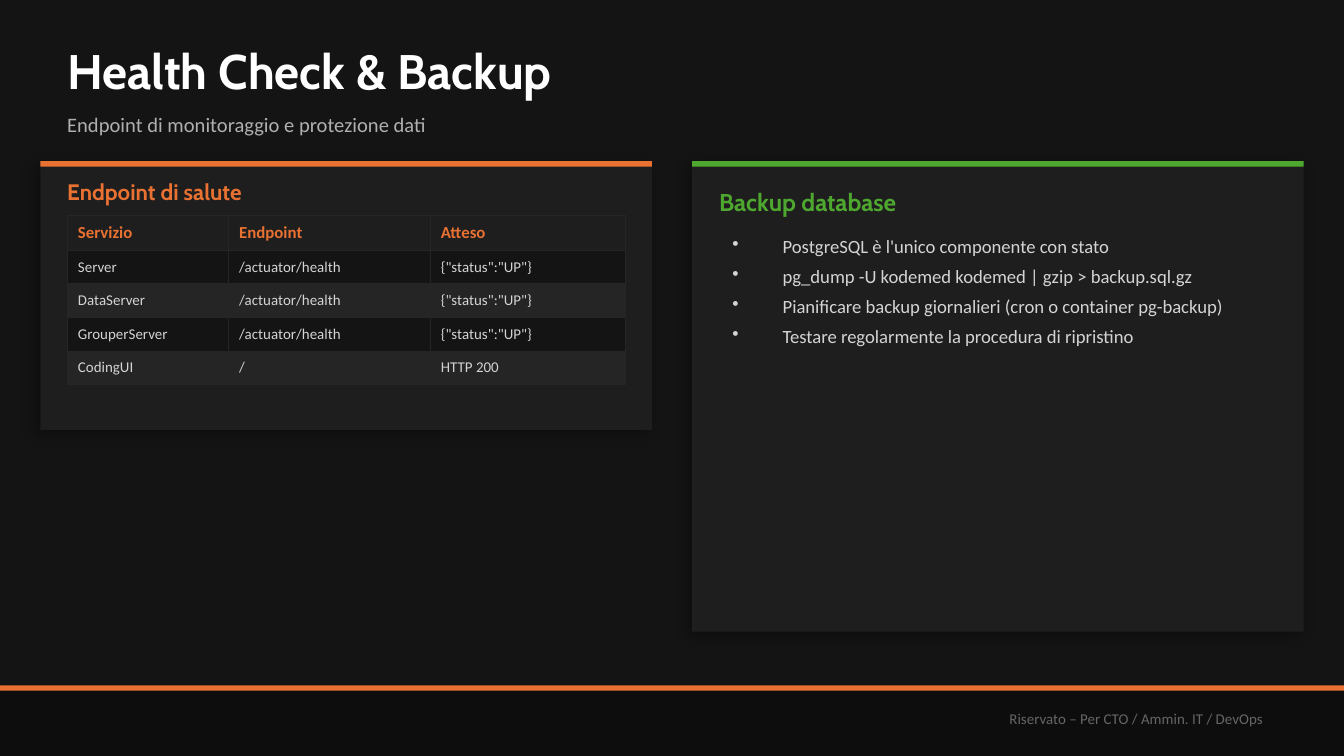
"""Build the health check and backup slide."""
from lxml.etree import SubElement
from pptx import Presentation
from pptx.dml.color import RGBColor
from pptx.enum.shapes import MSO_SHAPE as Shape
from pptx.enum.text import MSO_ANCHOR as Anchor, MSO_AUTO_SIZE as AutoSize, PP_ALIGN as Align
from pptx.oxml import parse_xml
from pptx.oxml.ns import nsdecls, qn
from pptx.util import Pt

PX = 4572
HEADING, BODY = "Cabin", "Calibri"
ORANGE, GREEN, WHITE = "E97132", "4EA72E", "FFFFFF"
DARK, PANEL, STRIPE, FOOTER = "141414", "1E1E1E", "252525", "0D0D0D"
LIGHT, MUTED, FAINT = "D4D4D4", "B0B0B0", "666666"
color = RGBColor.from_string


def set_font(font, size, name, hex_color, bold=False):
    font.size, font.name, font.bold = Pt(size), name, bold
    font.color.rgb = color(hex_color)


def add_bar(place, hex_color):
    bar = page.shapes.add_shape(Shape.RECTANGLE, *[n * PX for n in place])
    bar.shadow.inherit = False
    bar.fill.solid()
    bar.fill.fore_color.rgb = color(hex_color)
    bar.line.fill.background()
    return bar


deck = Presentation()
deck.slide_width, deck.slide_height = 2000 * PX, 1125 * PX
page = deck.slides.add_slide(deck.slide_layouts[5])
page.background.fill.solid()
page.background.fill.fore_color.rgb = color(DARK)

add_bar((0, 1020, 2000, 105), FOOTER)
add_bar((0, 1020, 2000, 8), ORANGE)

for left, height, accent in [(60, 400, ORANGE), (1030, 700, GREEN)]:
    panel = add_bar((left, 240, 910, height), PANEL)
    effects = panel._element.spPr.find(qn("a:effectLst"))
    effects.append(parse_xml(
        f'<a:outerShdw {nsdecls("a")} blurRad="{Pt(8)}" dist="{Pt(3)}" dir="8100000" '
        'algn="bl" rotWithShape="0"><a:srgbClr val="000000"><a:alpha val="35000"/>'
        '</a:srgbClr></a:outerShdw>'))
    add_bar((left, 240, 910, 8), accent)

texts = [
    ("Health Check & Backup", (100, 50, 1800, 110), 26, HEADING, WHITE, True),
    ("Endpoint di monitoraggio e protezione dati", (100, 150, 1800, 70), 11, BODY, MUTED, False),
    ("Endpoint di salute", (100, 260, 830, 50), 12, HEADING, ORANGE, True),
    ("Backup database", (1070, 270, 830, 60), 13, HEADING, GREEN, True),
    ("Riservato – Per CTO / Ammin. IT / DevOps", (1120, 1030, 760, 80), 8, BODY, FAINT, False),
]
for index, (text, place, size, name, hex_color, bold) in enumerate(texts):
    box = page.shapes.add_textbox(0, 0, 0, 0) if index else page.shapes.title
    box.left, box.top, box.width, box.height = [n * PX for n in place]
    frame = box.text_frame
    frame.word_wrap, frame.auto_size = True, AutoSize.NONE
    frame.vertical_anchor = Anchor.MIDDLE
    frame.margin_left = frame.margin_right = frame.margin_top = frame.margin_bottom = 0
    para = frame.paragraphs[0]
    para.text = text
    para.alignment = Align.RIGHT if hex_color == FAINT else Align.LEFT
    set_font(para.font, size, name, hex_color, bold)

rows = [
    ("Servizio", "Endpoint", "Atteso"),
    ("Server", "/actuator/health", '{"status":"UP"}'),
    ("DataServer", "/actuator/health", '{"status":"UP"}'),
    ("GrouperServer", "/actuator/health", '{"status":"UP"}'),
    ("CodingUI", "/", "HTTP 200"),
]
table = page.shapes.add_table(5, 3, 100 * PX, 320 * PX, 830 * PX, 250 * PX).table
for column, width in zip(table.columns, (240, 300, 290)):
    column.width = width * PX
for row_index, row in enumerate(rows):
    header = row_index == 0
    for column_index, text in enumerate(row):
        cell = table.cell(row_index, column_index)
        cell.vertical_anchor = Anchor.MIDDLE
        cell.margin_left = cell.margin_right = 16 * PX
        cell.margin_top = cell.margin_bottom = 11 * PX
        for side in ("lnL", "lnR", "lnT", "lnB"):
            line = SubElement(cell._tc.get_or_add_tcPr(), qn(f"a:{side}"), w=str(Pt(0.5)))
            SubElement(SubElement(line, qn("a:solidFill")), qn("a:srgbClr"), val=STRIPE)
        cell.fill.solid()
        cell.fill.fore_color.rgb = color(PANEL if header else DARK if row_index % 2 else STRIPE)
        para = cell.text_frame.paragraphs[0]
        para.text = text
        set_font(para.font, 9 if header else 8, BODY, ORANGE if header else LIGHT, header)

frame = page.shapes.add_textbox(1070 * PX, 340 * PX, 830 * PX, 560 * PX).text_frame
frame.word_wrap = True
for index, text in enumerate([
    "PostgreSQL è l'unico componente con stato",
    "pg_dump -U kodemed kodemed | gzip > backup.sql.gz",
    "Pianificare backup giornalieri (cron o container pg-backup)",
    "Testare regolarmente la procedura di ripristino",
]):
    para = frame.add_paragraph() if index else frame.paragraphs[0]
    para.text = text
    para.space_after = Pt(4)
    properties = para._p.get_or_add_pPr()
    properties.set("marL", str(75 * PX))
    properties.set("indent", str(-75 * PX))
    SubElement(properties, qn("a:buChar"), char="•")
    set_font(para.font, 10, BODY, LIGHT)

deck.save("out.pptx")
